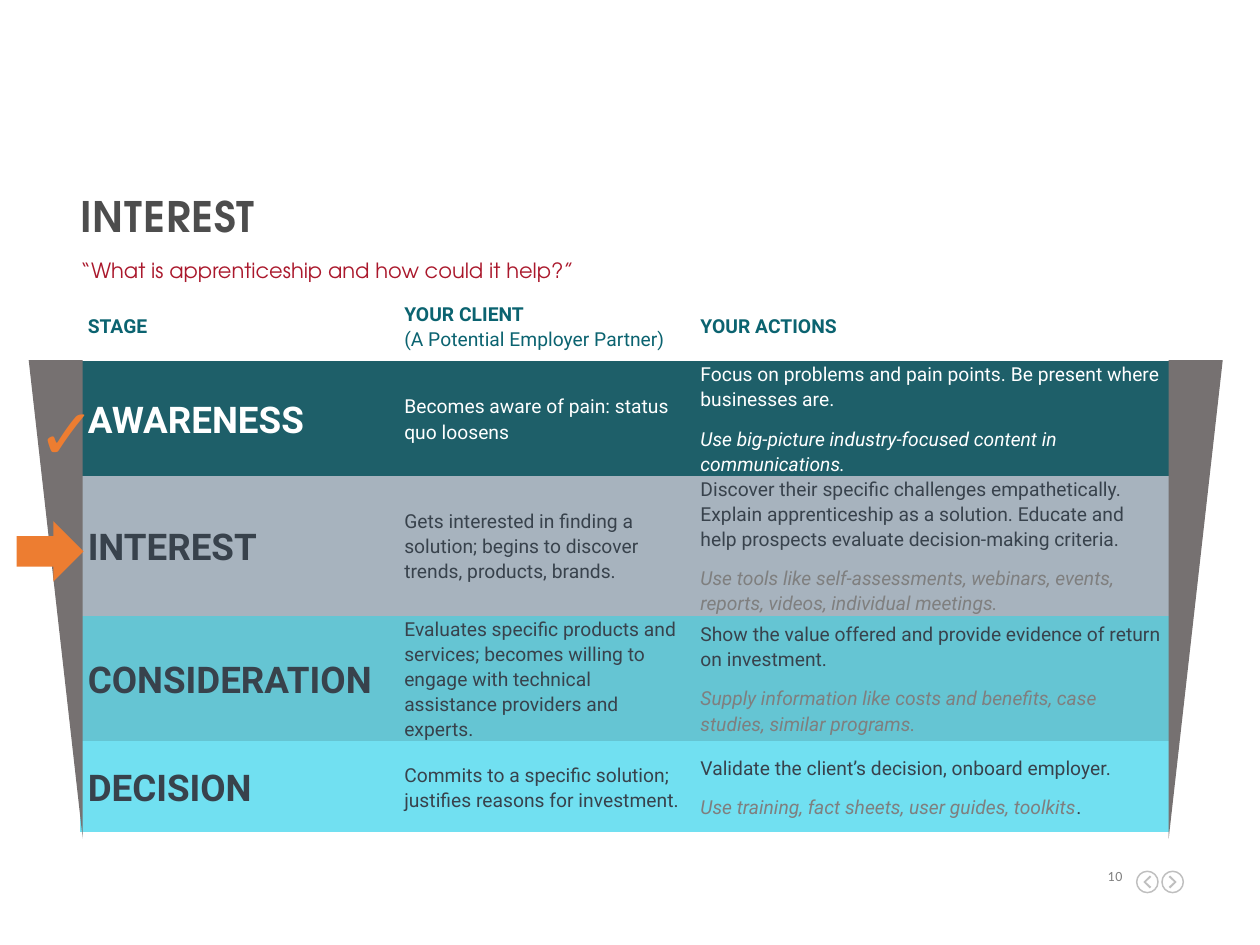
from dataclasses import dataclass

from lxml.etree import SubElement
from pptx import Presentation
from pptx.dml.color import RGBColor
from pptx.enum.shapes import MSO_SHAPE as Preset
from pptx.enum.text import MSO_ANCHOR as Anchor, MSO_AUTO_SIZE as AutoSize, PP_ALIGN as Align
from pptx.oxml.ns import qn
from pptx.util import Cm, Pt

WHITE = RGBColor(0xFF, 0xFF, 0xFF)
CHARCOAL = RGBColor(0x4D, 0x4D, 0x4D)
CRIMSON = RGBColor(0xAA, 0x18, 0x2C)
TEAL = RGBColor(0x0B, 0x63, 0x70)
SLATE = RGBColor(0x38, 0x42, 0x4C)
GRAY = RGBColor(0x7F, 0x7F, 0x7F)
NUMBER_GRAY = RGBColor(0x80, 0x80, 0x80)
BUTTON_GRAY = RGBColor(0xBF, 0xBF, 0xBF)
FUNNEL_GRAY = RGBColor(0x76, 0x71, 0x71)
ORANGE = RGBColor(0xED, 0x7D, 0x31)
AWARENESS_FILL = RGBColor(0x1E, 0x5F, 0x69)
INTEREST_FILL = RGBColor(0xA7, 0xB3, 0xBE)
CONSIDERATION_FILL = RGBColor(0x65, 0xC5, 0xD3)
DECISION_FILL = RGBColor(0x71, 0xE0, 0xF1)

HEADING_FONT = "TeX Gyre Adventor"
TABLE_FONT = "Roboto"
PLAIN_FONT = "Calibri"
NO_TABLE_STYLE = "{2D5ABB26-0587-4C30-8999-92F81FD0307C}"

CONTENT_LEFT = 1.62
COLUMN_WIDTHS = (6.38, 5.97, 9.6)
HEADER_HEIGHT = 1.42
BUTTON_RADIUS = 0.23
RING_WIDTH = 0.03
ARC_HANDLE = 0.55
CHEVRON = ((-0.08, -0.1), (0.03, 0), (-0.08, 0.1), (-0.05, 0.13), (0.08, 0), (-0.05, -0.13))


@dataclass(frozen=True)
class Stage:
    name: str
    client: str
    action: str
    advice: str
    fill: RGBColor
    height: float
    color: RGBColor = SLATE
    advice_color: RGBColor = GRAY
    ending: str = ""


@dataclass(frozen=True)
class FunnelSide:
    left: float
    flips: tuple[str, ...]


@dataclass(frozen=True)
class NavButton:
    center_x: float
    direction: int


STAGES = (
    Stage("AWARENESS", "Becomes aware of pain: status quo loosens",
          "Focus on problems and pain points. Be present where businesses are.",
          "Use big-picture industry-focused content in communications.",
          AWARENESS_FILL, 2.16, WHITE, WHITE),
    Stage("INTEREST",
          "Gets interested in finding a solution; begins to discover trends, products, brands.",
          "Discover their specific challenges empathetically. Explain apprenticeship as a "
          "solution. Educate and help prospects evaluate decision-making criteria.",
          "Use tools like self-assessments, webinars, events, reports, videos, "
          "individual meetings.", INTEREST_FILL, 2.67),
    Stage("CONSIDERATION",
          "Evaluates specific products and services; becomes willing to engage with "
          "technical assistance providers and experts.",
          "Show the value offered and provide evidence of return on investment.",
          "Supply information like costs and benefits, case studies, similar programs.",
          CONSIDERATION_FILL, 2.16),
    Stage("DECISION", "Commits to a specific solution; justifies reasons for investment.",
          "Validate the client’s decision, onboard employer.",
          "Use training, fact sheets, user guides, toolkits",
          DECISION_FILL, 1.83, ending="."),
)
FUNNEL_SIDES = (FunnelSide(0.58, ("flipH", "flipV")), FunnelSide(23.56, ("flipV",)))
NAV_BUTTONS = (NavButton(23.64, 1), NavButton(23.13, -1))


def write(paragraph, text: str, *, size: float = 11, color: RGBColor = SLATE,
          font: str = TABLE_FONT, bold: bool = False, italic: bool = False,
          tracking: float = 0) -> None:
    """Append a formatted run to the paragraph."""
    run = paragraph.add_run()
    run.text = text
    run.font.size, run.font.name = Pt(size), font
    run.font.bold, run.font.italic = bold, italic
    run.font.color.rgb = color
    if tracking:
        run.font._element.set("spc", str(round(tracking * 100)))


def place(shape, left: float, top: float, width: float, height: float) -> None:
    shape.left, shape.top, shape.width, shape.height = map(Cm, (left, top, width, height))


def prepare_frame(frame, margin_x: float = 0, margin_y: float = 0):
    """Set up a top-anchored wrapping frame and return its first paragraph."""
    frame.word_wrap, frame.auto_size = True, AutoSize.NONE
    frame.vertical_anchor = Anchor.TOP
    frame.margin_left = frame.margin_right = Cm(margin_x)
    frame.margin_top = frame.margin_bottom = Cm(margin_y)
    paragraph = frame.paragraphs[0]
    paragraph.alignment = Align.LEFT
    paragraph.space_before = Pt(0)
    return paragraph


def paint(shape, color: RGBColor) -> None:
    shape.shadow.inherit = False
    shape.fill.solid()
    shape.fill.fore_color.rgb = color
    shape.line.fill.background()


def cell_paragraph(cell, first: bool = True):
    paragraph = cell.text_frame.paragraphs[0] if first else cell.text_frame.add_paragraph()
    paragraph.line_spacing = 1.12
    paragraph.space_before = Pt(0 if first else 4)
    paragraph.space_after = Pt(4)
    return paragraph


def add_headings(slide) -> None:
    title, question = slide.shapes.title, slide.placeholders[1]
    place(title, CONTENT_LEFT, 3.83, 22.1, 1.42)
    write(prepare_frame(title.text_frame), "INTEREST", size=24, color=CHARCOAL,
          font=HEADING_FONT, bold=True, tracking=0.5)
    place(question, CONTENT_LEFT, 5.28, 22.1, 0.53)
    paragraph = prepare_frame(question.text_frame)
    paragraph.line_spacing = Pt(12)
    properties = paragraph._p.get_or_add_pPr()
    properties.set("marL", "0")
    properties.set("indent", "0")
    SubElement(properties, qn("a:buNone"))
    write(paragraph, "“What is apprenticeship and how could it help?”", size=12,
          color=CRIMSON, font=HEADING_FONT)


def add_stage_table(slide) -> None:
    heights = (HEADER_HEIGHT, *(stage.height for stage in STAGES))
    table = slide.shapes.add_table(len(heights), len(COLUMN_WIDTHS), Cm(CONTENT_LEFT), Cm(5.86),
                                   Cm(sum(COLUMN_WIDTHS)), Cm(sum(heights))).table
    table._tbl.tblPr.find(qn("a:tableStyleId")).text = NO_TABLE_STYLE
    table.horz_banding = False
    for column, width in zip(table.columns, COLUMN_WIDTHS):
        column.width = Cm(width)
    fills = (WHITE, *(stage.fill for stage in STAGES))
    for row, height, fill in zip(table.rows, heights, fills):
        row.height = Cm(height)
        for cell in row.cells:
            cell.fill.solid()
            cell.fill.fore_color.rgb = fill
            cell.vertical_anchor = Anchor.MIDDLE
            cell.margin_left = cell.margin_right = Cm(0.15)
            cell.margin_top = cell.margin_bottom = 0

    for column, heading in enumerate(("STAGE", "YOUR CLIENT", "YOUR ACTIONS")):
        write(cell_paragraph(table.cell(0, column)), heading, color=TEAL, bold=True)
    client_heading = table.cell(0, 1).text_frame.paragraphs[0]
    client_heading.add_line_break()
    write(client_heading, "(A Potential Employer Partner)", color=TEAL)

    for row, stage in enumerate(STAGES, start=1):
        name, client, actions = (table.cell(row, column) for column in range(3))
        write(cell_paragraph(name), stage.name, size=21, color=stage.color, bold=True)
        write(cell_paragraph(client), stage.client, color=stage.color)
        write(cell_paragraph(actions), stage.action, color=stage.color)
        advice = cell_paragraph(actions, first=False)
        write(advice, stage.advice, color=stage.advice_color, italic=True)
        if stage.ending:
            write(advice, stage.ending, color=stage.color)


def add_funnel_side(slide, side: FunnelSide) -> None:
    triangle = slide.shapes.add_shape(Preset.RIGHT_TRIANGLE, Cm(side.left), Cm(7.26),
                                      Cm(1.09), Cm(9.65))
    paint(triangle, FUNNEL_GRAY)
    for flip in side.flips:
        triangle._element.spPr.find(qn("a:xfrm")).set(flip, "1")


def circle(radius: float) -> list[tuple[float, float]]:
    """Return a start point, then two handles and an end point per quarter arc."""
    points, (x, y) = [(radius, 0)], (radius, 0)
    for _ in range(4):
        end_x, end_y = -y, x
        points += [(x + ARC_HANDLE * end_x, y + ARC_HANDLE * end_y),
                   (end_x + ARC_HANDLE * x, end_y + ARC_HANDLE * y), (end_x, end_y)]
        x, y = end_x, end_y
    return points


def add_nav_button(slide, button: NavButton) -> None:
    """Draw a ring with a chevron inside as one outline."""
    chevron = [(x * button.direction, y) for x, y in CHEVRON]
    rings = [circle(BUTTON_RADIUS), circle(BUTTON_RADIUS - RING_WIDTH)]
    contours = [[(Cm(button.center_x + x), Cm(17.78 + y)) for x, y in contour]
                for contour in (*rings, chevron)]
    builder = slide.shapes.build_freeform(*contours[0][0])
    for number, contour in enumerate(contours):
        if number:
            builder.move_to(*contour[0])
        builder.add_line_segments(contour[1:], close=True)
    shape = builder.convert_to_shape()
    ring_lines = list(shape._element.iter(qn("a:lnTo")))[:sum(len(r) - 1 for r in rings)]
    for start in range(0, len(ring_lines), 3):
        arc = ring_lines[start:start + 3]
        arc[0].tag = qn("a:cubicBezTo")
        for line in arc[1:]:
            arc[0].append(line[0])
            line.getparent().remove(line)
    paint(shape, BUTTON_GRAY)


def main() -> None:
    deck = Presentation()
    deck.slide_width, deck.slide_height = Cm(25.4), Cm(19.05)
    slide = deck.slides.add_slide(deck.slide_layouts[1])
    page_number = slide.shapes.add_textbox(Cm(22.05), Cm(17.49), Cm(0.58), Cm(0.33))
    paragraph = prepare_frame(page_number.text_frame)
    paragraph.alignment = Align.RIGHT
    write(paragraph, "10", size=8, color=NUMBER_GRAY, font=PLAIN_FONT, tracking=0.3)
    for button in NAV_BUTTONS:
        add_nav_button(slide, button)
    add_headings(slide)
    add_stage_table(slide)
    for side in FUNNEL_SIDES:
        add_funnel_side(slide, side)
    current_stage = slide.shapes.add_shape(Preset.DOWN_ARROW, Cm(0.4), Cm(10.44),
                                           Cm(1.22), Cm(1.35))
    current_stage.rotation = 270
    paint(current_stage, ORANGE)
    done_mark = slide.shapes.add_textbox(Cm(0.5), Cm(7.7), Cm(2.13), Cm(1.98))
    write(prepare_frame(done_mark.text_frame, 0.25, 0.13), "✓", size=40.5, color=ORANGE,
          font=PLAIN_FONT, bold=True)
    deck.save("out.pptx")


if __name__ == "__main__":
    main()
